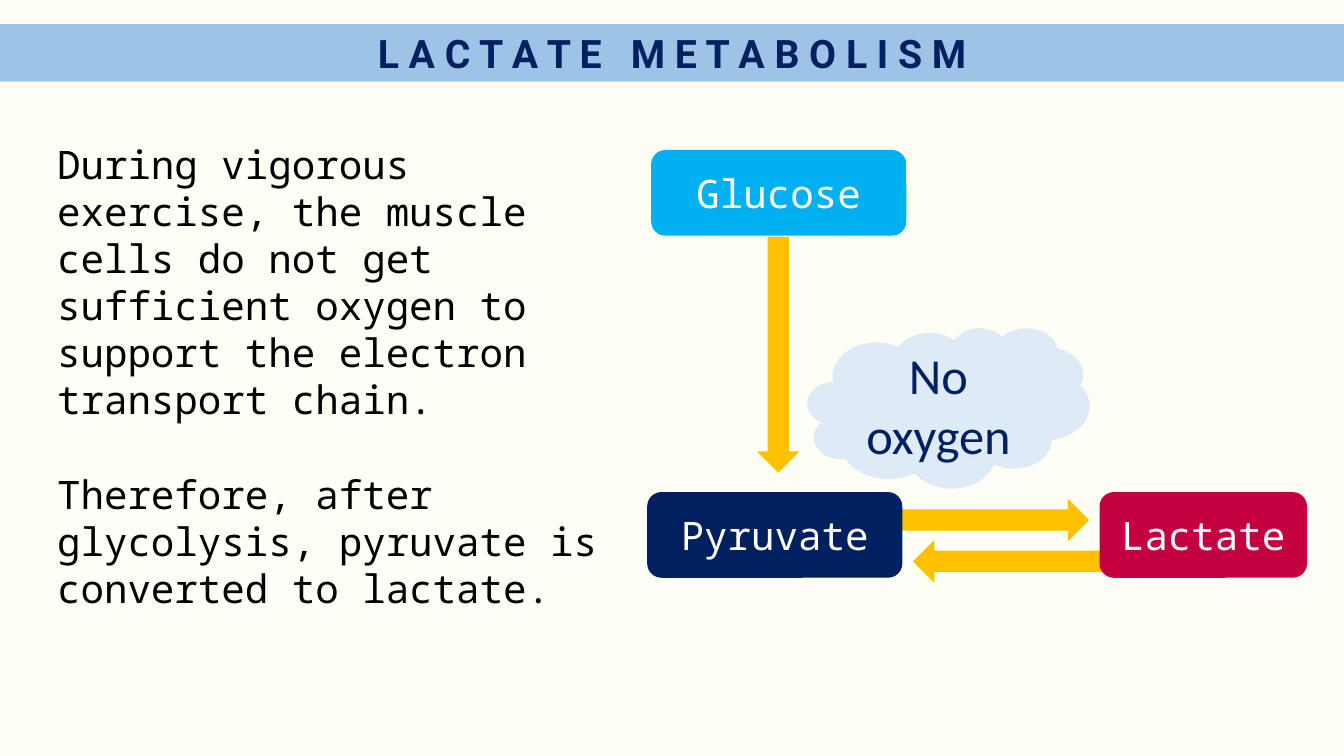
from dataclasses import dataclass

from pptx import Presentation
from pptx.dml.color import RGBColor
from pptx.enum.shapes import MSO_SHAPE
from pptx.enum.text import MSO_ANCHOR, PP_ALIGN
from pptx.util import Cm, Pt


@dataclass(frozen=True)
class Theme:
    paper: str = "FFFEF4"
    band: str = "9DC3E6"
    navy: str = "002060"
    black: str = "000000"
    white: str = "FFFFFF"
    sky: str = "00B0F0"
    crimson: str = "C40041"
    amber: str = "FFC000"
    mist: str = "DEEBF7"
    title_font: str = "Roboto"
    body_font: str = "Noto Sans Mono"
    cloud_font: str = "Calibri"
    text_size: int = 28
    cloud_size: int = 36
    paragraph_gap: int = 34


class SlideBuilder:
    def __init__(self, slide, theme):
        self.slide = slide
        self.theme = theme
        self.fill(slide.background, theme.paper)

    def fill(self, target, color):
        target.fill.solid()
        target.fill.fore_color.rgb = RGBColor.from_string(color)

    def format_runs(self, p, font, color, size, bold=False):
        for r in p.runs:
            r.font.name = font
            r.font.size = Pt(size)
            r.font.bold = bold
            r.font.color.rgb = RGBColor.from_string(color)

    def shape(self, kind, box, color):
        """Add a flat shape without outline; box is left, top, width, height in cm."""
        sp = self.slide.shapes.add_shape(kind, *map(Cm, box))
        sp.shadow.inherit = False
        self.fill(sp, color)
        sp.line.fill.background()
        return sp

    def label(self, sp, text, font, color, size, bold=False):
        tf = sp.text_frame
        tf.text = text
        tf.word_wrap = True
        tf.vertical_anchor = MSO_ANCHOR.MIDDLE
        p = tf.paragraphs[0]
        p.alignment = PP_ALIGN.CENTER
        self.format_runs(p, font, color, size, bold)

    def title(self, text, box):
        t = self.theme
        sp = self.shape(MSO_SHAPE.RECTANGLE, box, t.band)
        self.label(sp, text, t.title_font, t.navy, t.text_size, bold=True)

    def molecule(self, text, box, color):
        t = self.theme
        sp = self.shape(MSO_SHAPE.ROUNDED_RECTANGLE, box, color)
        self.label(sp, text, t.body_font, t.white, t.text_size)

    def cloud(self, text, box):
        t = self.theme
        sp = self.shape(MSO_SHAPE.CLOUD, box, t.mist)
        self.label(sp, text, t.cloud_font, t.navy, t.cloud_size)

    def arrow(self, kind, box):
        self.shape(kind, box, self.theme.amber)

    def body(self, paragraphs, box):
        t = self.theme
        tf = self.slide.shapes.add_textbox(*map(Cm, box)).text_frame
        tf.word_wrap = True
        for i, text in enumerate(paragraphs):
            p = tf.add_paragraph() if i else tf.paragraphs[0]
            p.text = text
            if i:
                p.space_before = Pt(t.paragraph_gap)
            self.format_runs(p, t.body_font, t.black, t.text_size)


def main():
    prs = Presentation()
    prs.slide_width, prs.slide_height = Cm(33.87), Cm(19.05)
    theme = Theme()
    s = SlideBuilder(prs.slides.add_slide(prs.slide_layouts[6]), theme)

    arrow_length, arrow_width = 5.94, 1.07
    box_width, box_height = 6.43, 2.16
    lower_row = 12.4

    s.arrow(MSO_SHAPE.RIGHT_ARROW, (21.51, 12.57, arrow_length, arrow_width))
    s.arrow(MSO_SHAPE.LEFT_ARROW, (23.01, 13.61, arrow_length, arrow_width))
    s.title(" ".join("LACTATE METABOLISM"), (0, 0.61, 33.87, 1.45))
    s.body(
        [
            "During vigorous exercise, the muscle cells do not get sufficient "
            "oxygen to support the electron transport chain.",
            "Therefore, after glycolysis, pyruvate is converted to lactate.",
        ],
        (1.19, 3.4, 15.09, 12.22),
    )
    s.molecule("Glucose", (16.41, 3.78, box_width, box_height), theme.sky)
    s.molecule("Pyruvate", (16.31, lower_row, box_width, box_height), theme.navy)
    s.molecule("Lactate", (27.71, lower_row, 5.23, box_height), theme.crimson)
    s.arrow(MSO_SHAPE.DOWN_ARROW, (19.08, 5.97, arrow_width, arrow_length))
    s.cloud("No oxygen", (20.35, 8.26, 7.11, 4.04))

    prs.save("out.pptx")


if __name__ == "__main__":
    main()
